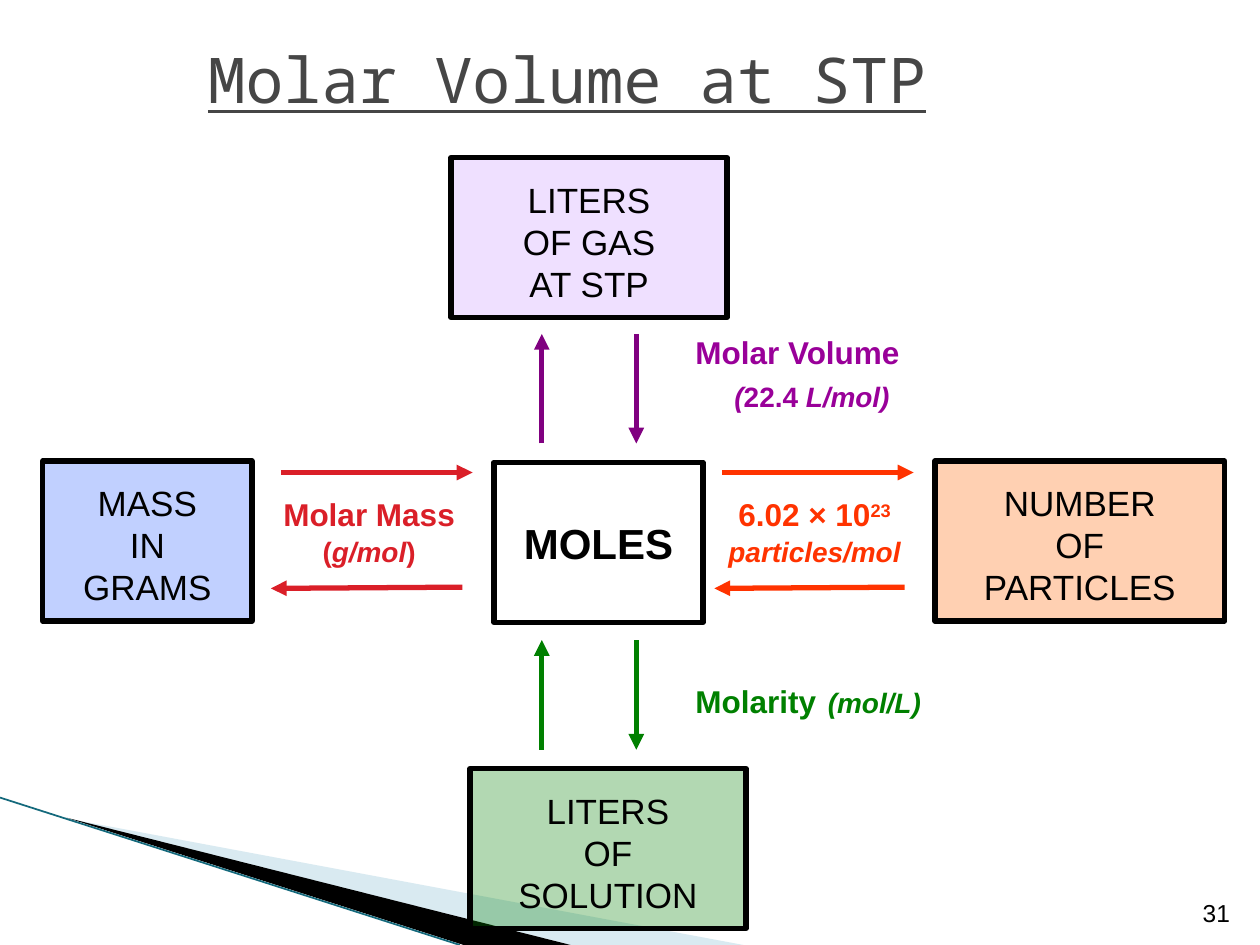
from lxml import etree
from pptx import Presentation
from pptx.dml.color import RGBColor
from pptx.enum.shapes import MSO_CONNECTOR, MSO_SHAPE
from pptx.enum.text import MSO_ANCHOR, PP_ALIGN
from pptx.oxml.ns import qn
from pptx.util import Inches, Pt

RECTANGLE = MSO_SHAPE.RECTANGLE
STRAIGHT = MSO_CONNECTOR.STRAIGHT
LEFT, CENTER, RIGHT = PP_ALIGN.LEFT, PP_ALIGN.CENTER, PP_ALIGN.RIGHT
TOP, MIDDLE, BOTTOM = MSO_ANCHOR.TOP, MSO_ANCHOR.MIDDLE, MSO_ANCHOR.BOTTOM

COLORS = {
    "black": "000000", "title": "464646", "pale_blue": "A0CBDC", "teal": "14697C",
    "mass": "3366FF", "particles": "FF6600", "solution": "008000", "gas": "CC99FF",
    "red": "DA1F28", "orange": "FF3300", "purple": "800080", "violet": "990099",
    "green": "008000",
}


def rgb(name):
    return RGBColor.from_string(COLORS[name])


def write(shape, paragraphs, size=18, color="black", font="Arial", bold=False,
          underline=None, align=CENTER, anchor=TOP, margins=(0.01, 0.01, 0.01, 0.01),
          line_spacing=None, space_before=1, indent=0):
    """Fill a shape with paragraphs, each a list of (text, run overrides).

    space_before and indent apply from the second paragraph on.
    """
    frame = shape.text_frame
    frame.word_wrap = True
    frame.vertical_anchor = anchor
    (frame.margin_left, frame.margin_top,
     frame.margin_right, frame.margin_bottom) = [Inches(m) for m in margins]
    for number, runs in enumerate(paragraphs):
        paragraph = frame.add_paragraph() if number else frame.paragraphs[0]
        paragraph.alignment = align
        if line_spacing:
            paragraph.line_spacing = Pt(line_spacing)
        if number:
            paragraph.space_before = Pt(space_before)
            if indent:
                paragraph._p.get_or_add_pPr().set("marL", str(Inches(indent)))
        for text, changes in runs:
            run = paragraph.add_run()
            run.text = text
            run.font.name = font
            run.font.size = Pt(changes.get("size", size))
            run.font.bold = bold
            run.font.italic = changes.get("italic", False)
            run.font.underline = underline
            run.font.color.rgb = rgb(color)
            if "raised" in changes:
                run._r.get_or_add_rPr().set("baseline", str(changes["raised"] * 1000))


prs = Presentation()
prs.slide_width, prs.slide_height = Inches(10), Inches(7.5)
slide = prs.slides.add_slide(prs.slide_layouts[6])
shapes = slide.shapes

# Corner decoration
wedges = [
    ("pale_blue", 40, [(0.55, 6.5), (5.9, 7.5), (4.53, 7.5)]),
    ("black", 100, [(0.53, 6.49), (4.53, 7.5), (3.68, 7.5)]),
]
translucent = []
for color, opacity, points in wedges:
    corners = [(Inches(x), Inches(y)) for x, y in points]
    builder = shapes.build_freeform(*corners[0])
    builder.add_line_segments(corners[1:], close=True)
    wedge = builder.convert_to_shape()
    wedge.shadow.inherit = False
    wedge.fill.solid()
    wedge.fill.fore_color.rgb = rgb(color)
    wedge.line.fill.background()
    translucent.append((wedge, opacity))

# Title and page number
title = shapes.add_textbox(Inches(0), Inches(0), Inches(9), Inches(1.25))
write(title, [[("Molar Volume at STP", {})]], size=36, color="title",
      font="Noto Sans Mono", underline=True, anchor=MIDDLE,
      margins=(0.1, 0.05, 0.1, 0.05))
page_number = shapes.add_textbox(Inches(9.25), Inches(7.01), Inches(0.61), Inches(0.4))
write(page_number, [[("31", {})]], size=14, align=RIGHT, anchor=BOTTOM,
      margins=(0.1, 0.05, 0.1, 0.05))

# Quantities
BOX_HEIGHT = 1.27
quantities = [
    (["MASS", "IN", "GRAMS"], 0.34, 3.66, 1.66, "mass"),
    (["MOLES"], 3.92, 3.67, 1.66, None),
    (["NUMBER", "OF", "PARTICLES"], 7.42, 3.66, 2.3, "particles"),
    (["LITERS", "OF", "SOLUTION"], 3.73, 6.1, 2.19, "solution"),
    (["LITERS", "OF GAS", "AT STP"], 3.58, 1.25, 2.19, "gas"),
]
for lines, left, top, width, color in quantities:
    box = shapes.add_shape(RECTANGLE, Inches(left), Inches(top),
                           Inches(width), Inches(BOX_HEIGHT))
    box.shadow.inherit = False
    box.line.color.rgb = rgb("black")
    box.line.width = Pt(3)
    paragraphs = [[(line, {})] for line in lines]
    if color:
        box.fill.solid()
        box.fill.fore_color.rgb = rgb(color)
        translucent.append((box, 30))
        write(box, paragraphs, size=20, anchor=MIDDLE, line_spacing=24,
              space_before=0, margins=(0.01, 0.07, 0.01, 0.01))
    else:
        box.fill.background()
        write(box, paragraphs, size=24, bold=True, anchor=MIDDLE)

for shape, opacity in translucent:
    fill_color = shape._element.spPr.find(qn("a:solidFill"))[0]
    etree.SubElement(fill_color, qn("a:alpha")).set("val", str(opacity * 1000))

# Conversion factors
small, small_italic = {"size": 16}, {"size": 16, "italic": True}
factors = [
    (1.83, 3.92, 2.2, 0.89, "red", CENTER, 1,
     [[("Molar Mass", {})], [("(", small), ("g/mol", small_italic), (")", small)]]),
    (4.92, 3.92, 3.09, 0.7, "orange", CENTER, 1,
     [[("6.02 × 10", {}), ("23", {"raised": 30})], [("particles/mol", small_italic)]]),
    (5.51, 2.63, 3.36, 0.55, "violet", LEFT, 5,
     [[("Molar Volume", {})],
      [("(", small_italic), ("22.4", small), (" L/mol)", small_italic)]]),
    (5.51, 5.32, 3.46, 0.55, "green", LEFT, 0,
     [[("Molarity", {}), (" ", {"size": 24}), ("(mol/L)", small_italic)]]),
]
for left, top, width, height, color, align, gap, paragraphs in factors:
    label = shapes.add_textbox(Inches(left), Inches(top), Inches(width), Inches(height))
    write(label, paragraphs, color=color, bold=True, align=align, space_before=gap,
          indent=0.31 if align == LEFT else 0)

# Conversion arrows, each pointing at its second end, and the corner line
arrows = [
    ("red", 2.23, 3.75, 3.75, 3.75),
    ("red", 3.67, 4.66, 2.15, 4.67),
    ("orange", 5.73, 3.75, 7.25, 3.75),
    ("orange", 7.18, 4.66, 5.67, 4.67),
]
for color, top in (("purple", 2.65), ("green", 5.08)):
    arrows.append((color, 4.3, top + 0.87, 4.3, top))
    arrows.append((color, 5.05, top, 5.05, top + 0.87))

for color, *ends in arrows + [("teal", 0, 6.33, 3.65, 7.5)]:
    connector = shapes.add_connector(STRAIGHT, *[Inches(end) for end in ends])
    connector.line.color.rgb = rgb(color)
    if color == "teal":
        connector.line.width = Pt(1)
    else:
        connector.line.width = Pt(3)
        tip = etree.SubElement(connector.line._get_or_add_ln(), qn("a:tailEnd"))
        tip.set("type", "triangle")
    etree.SubElement(connector._element.spPr, qn("a:effectLst"))

prs.save("out.pptx")
